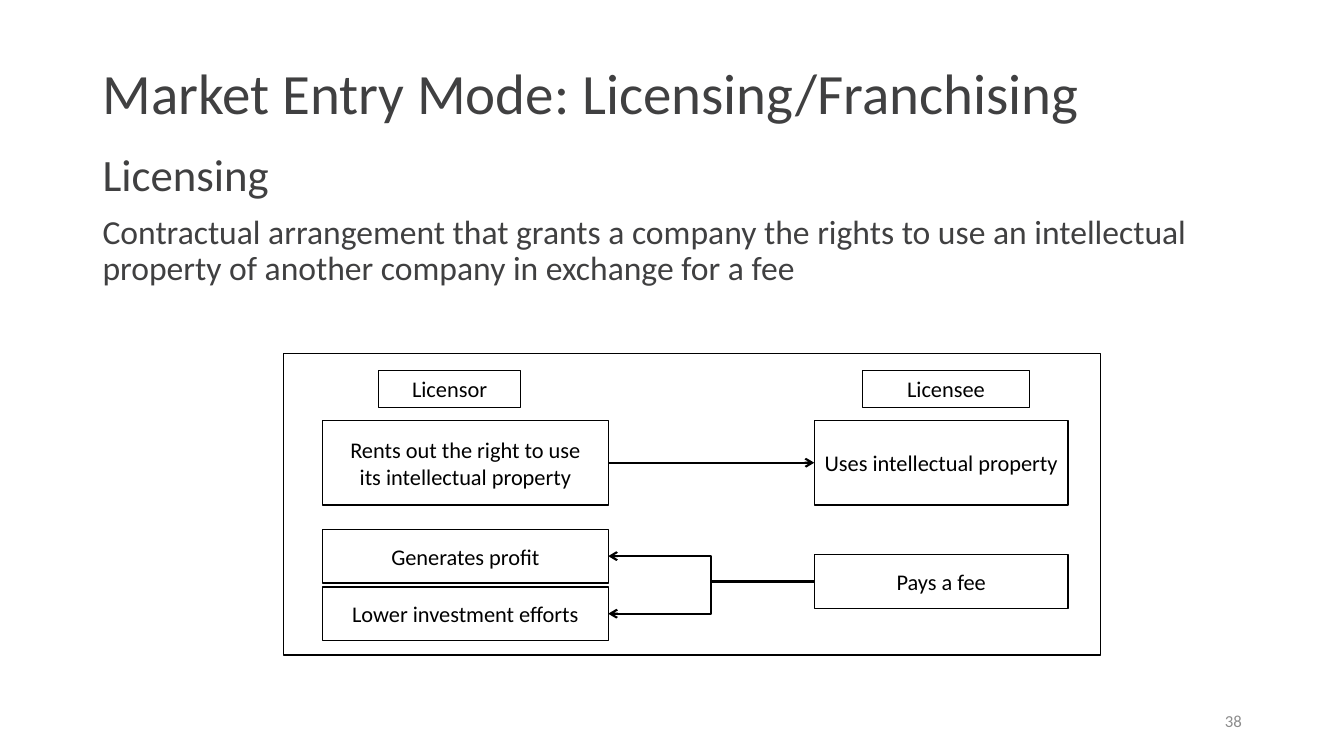
from lxml.etree import SubElement
from pptx import Presentation
from pptx.dml.color import RGBColor
from pptx.enum.shapes import MSO_CONNECTOR as Link, MSO_SHAPE as Shape
from pptx.enum.text import MSO_ANCHOR as Anchor, MSO_AUTO_SIZE as AutoSize, PP_ALIGN as Align
from pptx.oxml.ns import qn
from pptx.util import Cm, Pt

COLORS = {"text": "404041", "diagram": "000000", "number": "8C8C8C"}
FONT = "Calibri"
TITLE = "Market Entry Mode: Licensing/Franchising"
BODY = [
    ("Licensing", 32),
    ("Contractual arrangement that grants a company the rights to use an "
     "intellectual property of another company in exchange for a fee", 24),
]
PAGE_NUMBER = "38"

FRAME = (7.14, 8.91, 20.6, 7.6)
LICENSOR_COLUMN = (8.13, 7.2)
LICENSEE_COLUMN = (20.52, 6.4)
HEADERS = [
    ("Licensor", 9.53, 3.6),
    ("Licensee", 21.74, 4.2),
]
HEADER_TOP, HEADER_HEIGHT = 9.33, 0.94
STEPS = {
    "rents": (["Rents out the right to use", "its intellectual property"], LICENSOR_COLUMN, 10.59, 2.14),
    "profit": (["Generates profit"], LICENSOR_COLUMN, 13.34, 1.35),
    "effort": (["Lower investment efforts"], LICENSOR_COLUMN, 14.79, 1.35),
    "uses": (["Uses intellectual property"], LICENSEE_COLUMN, 10.59, 2.14),
    "pays": (["Pays a fee"], LICENSEE_COLUMN, 13.98, 1.35),
}
LEFT_SIDE, RIGHT_SIDE = 1, 3
ARROWS = [
    ("rents", RIGHT_SIDE, "uses", LEFT_SIDE, Link.STRAIGHT),
    ("pays", LEFT_SIDE, "profit", RIGHT_SIDE, Link.ELBOW),
    ("pays", LEFT_SIDE, "effort", RIGHT_SIDE, Link.ELBOW),
]


def color(name):
    return RGBColor.from_string(COLORS[name])


def place(shape, left, top, width, height):
    shape.left, shape.top, shape.width, shape.height = map(Cm, (left, top, width, height))


def write(para, text, size=16, fill="diagram", align=Align.CENTER, spacing=None, before=0):
    para.alignment = align
    para.line_spacing = spacing
    para.space_before = Pt(before)
    span = para.add_run()
    span.text = text
    span.font.name = FONT
    span.font.size = Pt(size)
    span.font.color.rgb = color(fill)


def add_box(page, area, lines=(), weight=1, wrap=False):
    box = page.shapes.add_shape(Shape.RECTANGLE, *map(Cm, area))
    box.shadow.inherit = False
    box.fill.background()
    box.line.color.rgb = color("diagram")
    box.line.width = Pt(weight)
    frame = box.text_frame
    frame.word_wrap = wrap
    frame.vertical_anchor = Anchor.MIDDLE
    for index, line in enumerate(lines):
        write(frame.add_paragraph() if index else frame.paragraphs[0], line)
    return box


def add_arrow(page, start, start_side, end, end_side, kind):
    arrow = page.shapes.add_connector(kind, 0, 0, 0, 0)
    arrow.begin_connect(start, start_side)
    arrow.end_connect(end, end_side)
    arrow.line.color.rgb = color("diagram")
    arrow.line.width = Pt(1.5)
    SubElement(arrow.line._get_or_add_ln(), qn("a:tailEnd"), type="arrow")
    SubElement(arrow._element.spPr, qn("a:effectLst"))


def add_texts(page):
    title = page.shapes.title
    place(title, 2.33, 1.1, 26.62, 2.62)
    title.text_frame.auto_size = AutoSize.NONE
    title.text_frame.vertical_anchor = Anchor.MIDDLE
    write(title.text_frame.paragraphs[0], TITLE, size=40.7, fill="text", align=Align.LEFT, spacing=0.9)

    body = page.placeholders[1]
    place(body, 2.33, 3.73, 29.21, 13.44)
    frame = body.text_frame
    frame.auto_size = AutoSize.NONE
    for index, (text, size) in enumerate(BODY):
        para = frame.add_paragraph() if index else frame.paragraphs[0]
        properties = para._p.get_or_add_pPr()
        properties.set("marL", "0")
        properties.set("indent", "0")
        SubElement(properties, qn("a:buNone"))
        write(para, text, size=size, fill="text", align=Align.LEFT, spacing=0.9, before=10 if index else 0)

    number = page.shapes.add_textbox(*map(Cm, (23.93, 17.65, 7.62, 1.02))).text_frame
    number.word_wrap = True
    number.vertical_anchor = Anchor.MIDDLE
    write(number.paragraphs[0], PAGE_NUMBER, size=12, fill="number", align=Align.RIGHT)


def add_diagram(page):
    add_box(page, FRAME)
    for name, left, width in HEADERS:
        add_box(page, (left, HEADER_TOP, width, HEADER_HEIGHT), [name], weight=0.75, wrap=True)
    boxes = {
        name: add_box(page, (left, top, width, height), lines)
        for name, (lines, (left, width), top, height) in STEPS.items()
    }
    for start, start_side, end, end_side, kind in ARROWS:
        add_arrow(page, boxes[start], start_side, boxes[end], end_side, kind)


def main():
    deck = Presentation()
    deck.slide_width, deck.slide_height = Cm(33.87), Cm(19.05)
    page = deck.slides.add_slide(deck.slide_layouts[1])
    add_texts(page)
    add_diagram(page)
    deck.save("out.pptx")


if __name__ == "__main__":
    main()
